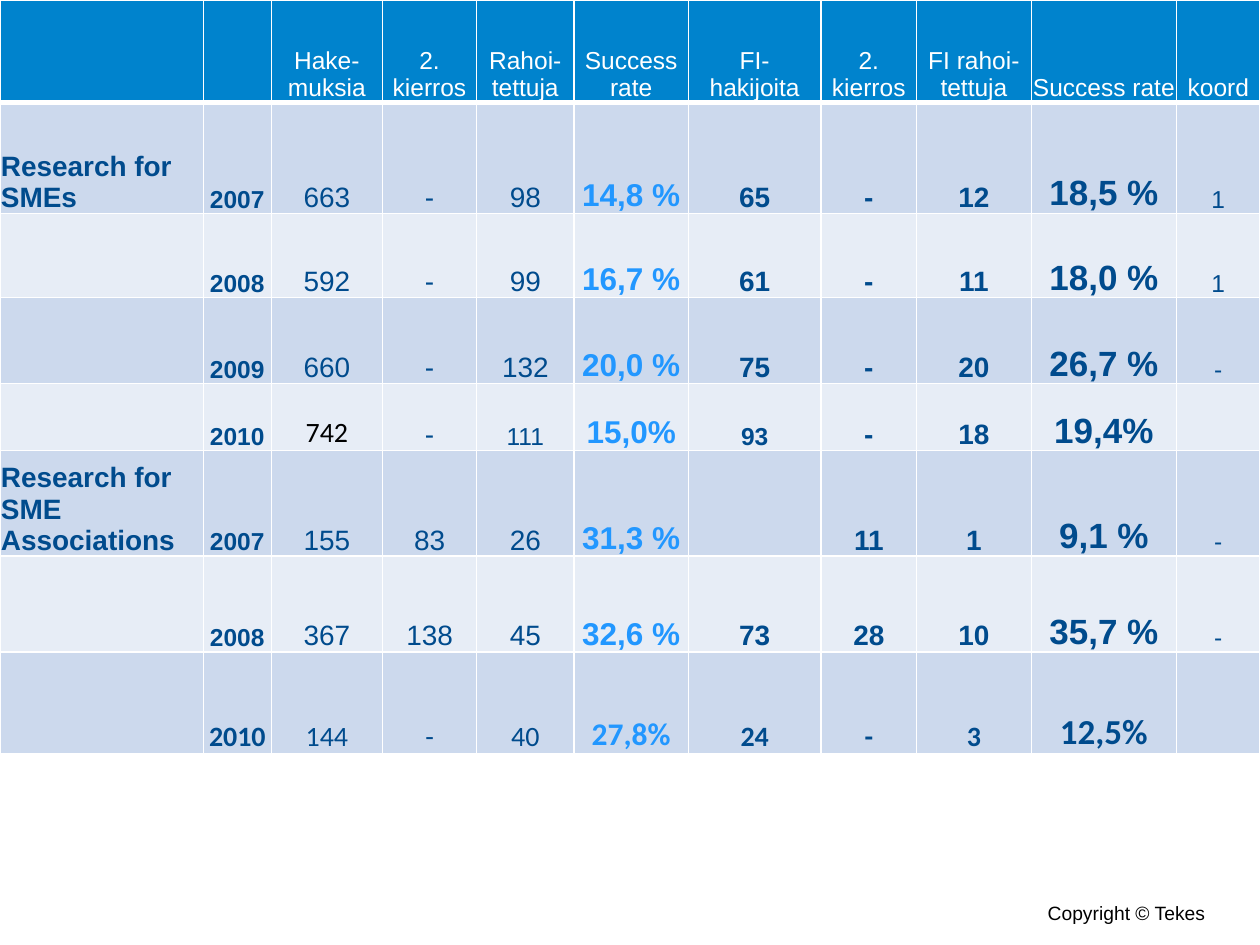
from dataclasses import dataclass, replace

from lxml import etree
from pptx import Presentation
from pptx.dml.color import RGBColor
from pptx.enum.text import MSO_ANCHOR, PP_ALIGN
from pptx.oxml.ns import qn
from pptx.util import Cm, Pt

LEFT, CENTER, RIGHT = PP_ALIGN.LEFT, PP_ALIGN.CENTER, PP_ALIGN.RIGHT
BOTTOM, MIDDLE = MSO_ANCHOR.BOTTOM, MSO_ANCHOR.MIDDLE

COLORS = {
    "header": "0083CD",
    "band_dark": "CCD9ED",
    "band_light": "E7EDF6",
    "white": "FFFFFF",
    "navy": "004B8D",
    "sky": "2297FF",
    "black": "000000",
}


@dataclass(frozen=True)
class TextStyle:
    size: int
    color: str = "navy"
    bold: bool = False
    font: str = "Arial"
    align: PP_ALIGN = CENTER


HEADER = TextStyle(14, "white")
PLAIN = TextStyle(16)
BOLD = TextStyle(16, bold=True)
YEAR = TextStyle(14, bold=True)
COLUMN_STYLES = [
    TextStyle(16, bold=True, align=LEFT), YEAR, PLAIN, PLAIN, PLAIN,
    TextStyle(18, "sky", True), BOLD, BOLD, BOLD,
    TextStyle(20, bold=True), TextStyle(14),
]
LAST_ROW_STYLES = [replace(style, font="Calibri") for style in COLUMN_STYLES]
SPECIAL_STYLES = {
    (4, 2): TextStyle(16, "black", font="Calibri"),
    (4, 4): TextStyle(14),
    (4, 6): YEAR,
    (7, 1): replace(BOLD, font="Calibri"),
}

COLUMN_WIDTHS = [4.1, 1.37, 2.24, 1.9, 1.96, 2.31, 2.67, 1.93, 2.31, 2.93, 1.68]
ROW_HEIGHTS = [2.06, 2.24, 1.7, 1.73, 1.35, 2.13, 1.93, 2.06]
ROWS = [
    ["", "", "Hake-muksia", "2.\nkierros", "Rahoi-tettuja", "Success rate",
     "FI-\nhakijoita", "2. kierros", "FI rahoi-tettuja", "Success rate", "koord"],
    ["Research for SMEs", "2007", "663", "-", "98", "14,8 %", "65", "-", "12", "18,5 %", "1"],
    ["", "2008", "592", "-", "99", "16,7 %", "61", "-", "11", "18,0 %", "1"],
    ["", "2009", "660", "-", "132", "20,0 %", "75", "-", "20", "26,7 %", "-"],
    ["", "2010", "742", "-", "111", "15,0%", "93", "-", "18", "19,4%", ""],
    ["Research for SME Associations", "2007", "155", "83", "26", "31,3 %", "", "11", "1", "9,1 %", "-"],
    ["", "2008", "367", "138", "45", "32,6 %", "73", "28", "10", "35,7 %", "-"],
    ["", "2010", "144", "-", "40", "27,8%", "24", "-", "3", "12,5%", ""],
]


def rgb(name: str) -> RGBColor:
    return RGBColor.from_string(COLORS[name])


def write_text(tf, text: str, style: TextStyle) -> None:
    tf.text = text
    for p in tf.paragraphs:
        p.alignment = style.align
        for r in p.runs:
            for name, value in {"size": Pt(style.size), "bold": style.bold,
                                "name": style.font}.items():
                setattr(r.font, name, value)
            r.font.color.rgb = rgb(style.color)


def add_borders(cell, bottom_width: int) -> None:
    tc_pr = cell._tc.get_or_add_tcPr()
    for side, width in {"lnL": 1, "lnR": 1, "lnT": 1, "lnB": bottom_width}.items():
        line = etree.SubElement(tc_pr, qn(f"a:{side}"), w=str(Pt(width)))
        fill = etree.SubElement(line, qn("a:solidFill"))
        etree.SubElement(fill, qn("a:srgbClr"), val=COLORS["white"])


def pick_style(row: int, col: int) -> TextStyle:
    if row == 0:
        return HEADER
    styles = LAST_ROW_STYLES if row == len(ROWS) - 1 else COLUMN_STYLES
    return SPECIAL_STYLES.get((row, col), styles[col])


def pick_fill(row: int) -> str:
    if row == 0:
        return "header"
    return "band_dark" if row % 2 else "band_light"


def add_results_table(s) -> None:
    table = s.shapes.add_table(len(ROWS), len(COLUMN_WIDTHS), Cm(0), Cm(0),
                               Cm(sum(COLUMN_WIDTHS)), Cm(sum(ROW_HEIGHTS))).table
    table.first_row = table.horz_banding = False
    for column, width in zip(table.columns, COLUMN_WIDTHS):
        column.width = Cm(width)
    for row, height in zip(table.rows, ROW_HEIGHTS):
        row.height = Cm(height)
    cell_format = {"margin_left": Cm(0.02), "margin_right": Cm(0.02),
                   "margin_top": Cm(0.02), "margin_bottom": Cm(0),
                   "vertical_anchor": BOTTOM}
    for i, texts in enumerate(ROWS):
        for j, text in enumerate(texts):
            cell = table.cell(i, j)
            for name, value in cell_format.items():
                setattr(cell, name, value)
            add_borders(cell, 1 if i else 3)
            cell.fill.solid()
            cell.fill.fore_color.rgb = rgb(pick_fill(i))
            if text:
                write_text(cell.text_frame, text, pick_style(i, j))


def add_copyright(s) -> None:
    tf = s.shapes.add_textbox(Cm(20.9), Cm(18.16), Cm(3.4), Cm(0.5)).text_frame
    for name, value in {"margin_left": 0, "margin_right": 0, "margin_top": 0,
                        "margin_bottom": 0, "word_wrap": True,
                        "vertical_anchor": MIDDLE}.items():
        setattr(tf, name, value)
    write_text(tf, "Copyright © Tekes", TextStyle(11, "black", align=RIGHT))


def main() -> None:
    prs = Presentation()
    prs.slide_width, prs.slide_height = Cm(25.4), Cm(19.05)
    s = prs.slides.add_slide(prs.slide_layouts[6])
    add_copyright(s)
    add_results_table(s)
    prs.save("out.pptx")


if __name__ == "__main__":
    main()
